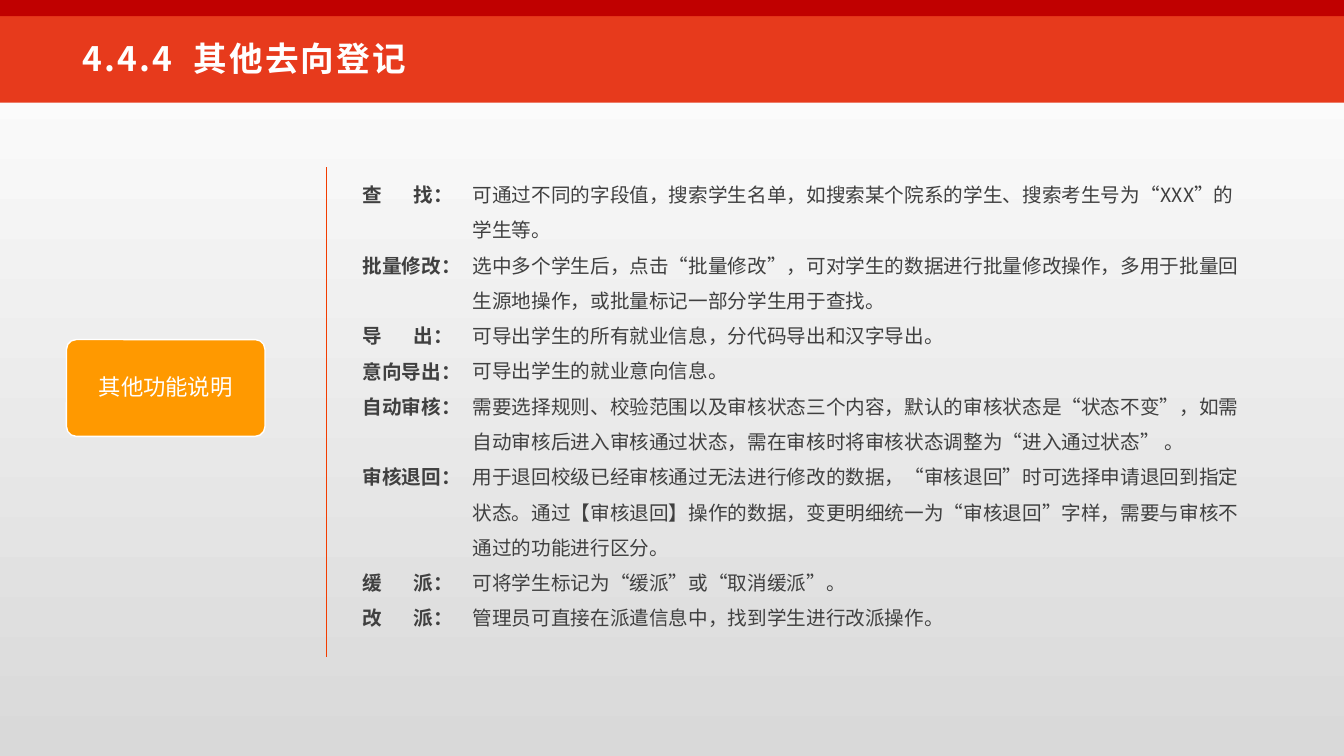
from lxml import etree
from pptx import Presentation, util as u
from pptx.dml.color import RGBColor
from pptx.enum import shapes, text
from pptx.oxml.ns import qn

Pt = u.Pt
FONT = "Noto Sans CJK SC"
COLORS = {"banner": "E73A1C", "strip": "C00000", "divider": "F23C00",
          "card": "FF9900", "white": "FFFFFF", "grey": "D9D9D9", "ink": "404040"}
LINE_PITCH = 25.2  # one line of 14 pt text at 1.5 spacing
LABEL_TAB = 36.4   # second character of the two-character labels

# Label, description, number of lines the description takes
FUNCTIONS = [
    ("查\t找：", "可通过不同的字段值，搜索学生名单，如搜索某个院系的学生、搜索考生号为“XXX”的学生等。", 2),
    ("批量修改：", "选中多个学生后，点击“批量修改”，可对学生的数据进行批量修改操作，多用于批量回生源地操作，或批量标记一部分学生用于查找。", 2),
    ("导\t出：", "可导出学生的所有就业信息，分代码导出和汉字导出。", 1),
    ("意向导出：", "可导出学生的就业意向信息。", 1),
    ("自动审核：", "需要选择规则、校验范围以及审核状态三个内容，默认的审核状态是“状态不变”，如需自动审核后进入审核通过状态，需在审核时将审核状态调整为“进入通过状态” 。", 2),
    ("审核退回：", "用于退回校级已经审核通过无法进行修改的数据，“审核退回”时可选择申请退回到指定状态。通过【审核退回】操作的数据，变更明细统一为“审核退回”字样，需要与审核不通过的功能进行区分。", 3),
    ("缓\t派：", "可将学生标记为“缓派”或“取消缓派”。", 1),
    ("改\t派：", "管理员可直接在派遣信息中，找到学生进行改派操作。", 1),
]


def rgb(name):
    return RGBColor.from_string(COLORS[name])


def apply(obj, values):
    for name, value in values.items():
        setattr(obj, name, value)


def add_background(s):
    fill = s.background.fill
    fill.gradient()
    fill.gradient_angle = 270
    for stop, name in zip(fill.gradient_stops, ("white", "grey")):
        stop.color.rgb = rgb(name)


def add_block(s, kind, box, fill, line=None):
    sp = s.shapes.add_shape(kind, *map(Pt, box))
    sp.shadow.inherit = False
    sp.fill.solid()
    sp.fill.fore_color.rgb = rgb(fill)
    if line:
        sp.line.color.rgb = rgb(line)
        sp.line.width = Pt(1)
    else:
        sp.line.fill.background()
    return sp


def add_divider(s, x, top, bottom):
    line = s.shapes.add_connector(shapes.MSO_CONNECTOR.STRAIGHT,
                                  Pt(x), Pt(top), Pt(x), Pt(bottom))
    line.line.color.rgb = rgb("divider")
    line.line.width = Pt(0.5)
    etree.SubElement(line._element.spPr, qn("a:effectLst"))


def add_textbox(s, box, frame=None):
    tf = s.shapes.add_textbox(*map(Pt, box)).text_frame
    apply(tf, {"word_wrap": True, **(frame or {})})
    return tf


def write(p, content, size, color, bold=False, spacing=None, para=None):
    apply(p, para or {})
    r = p.add_run()
    r.text = content
    apply(r.font, {"size": Pt(size), "bold": bold, "name": FONT})
    r.font.color.rgb = rgb(color)
    rPr = r._r.get_or_add_rPr()
    rPr.set("lang", "zh-CN")
    if spacing:
        rPr.set("spc", str(int(spacing * 100)))
    etree.SubElement(rPr, qn("a:ea"), typeface=FONT)


def add_tab_stop(p, pos):
    tabs = etree.SubElement(p._p.get_or_add_pPr(), qn("a:tabLst"))
    etree.SubElement(tabs, qn("a:tab"), pos=str(Pt(pos)), algn="l")


def add_functions(s):
    labels = add_textbox(s, (252, 118.8, 124.6, 334.8))
    details = add_textbox(s, (330.5, 118.8, 568.1, 385.9))
    skipped = 0
    for i, (label, detail, lines) in enumerate(FUNCTIONS):
        label_p, detail_p = (tf.add_paragraph() if i else tf.paragraphs[0]
                             for tf in (labels, details))
        write(label_p, label, 14, "ink", bold=True,
              para={"line_spacing": 1.5, "space_before": Pt(skipped * LINE_PITCH)})
        add_tab_stop(label_p, LABEL_TAB)
        write(detail_p, detail, 14, "ink", para={"line_spacing": 1.5})
        skipped = lines - 1


def main():
    prs = Presentation()
    apply(prs, {"slide_width": Pt(960), "slide_height": Pt(540)})
    s = prs.slides.add_slide(prs.slide_layouts[6])
    add_background(s)

    # Header
    rect = shapes.MSO_SHAPE.RECTANGLE
    add_block(s, rect, (0, 0, 960, 73.4), "banner")
    add_block(s, rect, (0, 0, 960, 11.5), "strip")
    middle = {"vertical_anchor": text.MSO_ANCHOR.MIDDLE}
    title = add_textbox(s, (51.8, 20.2, 578.9, 41.8), middle)
    write(title.paragraphs[0], "4.4.4  其他去向登记", 24, "white", bold=True,
          spacing=1.5, para={"space_after": Pt(10)})

    # Topic card and divider
    add_divider(s, 233.3, 119.5, 469.4)
    card = add_block(s, shapes.MSO_SHAPE.ROUNDED_RECTANGLE,
                     (47.5, 242.6, 141.8, 69.1), "card", "white")
    card.adjustments[0] = 0.1
    apply(card.text_frame, {"word_wrap": True, **middle})
    write(card.text_frame.paragraphs[0], "其他功能说明", 16, "white",
          para={"alignment": text.PP_ALIGN.CENTER, "line_spacing": 0.9})

    # Function descriptions
    add_functions(s)
    prs.save("out.pptx")


if __name__ == "__main__":
    main()
